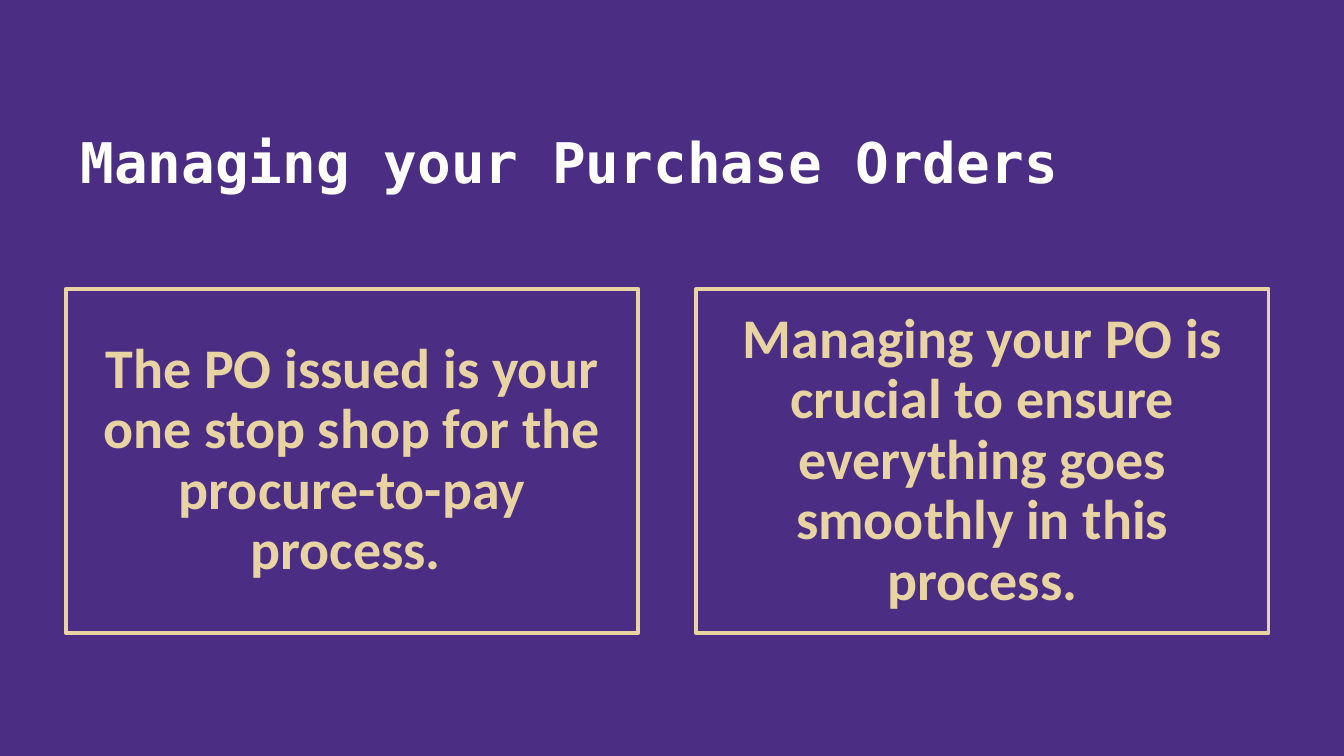
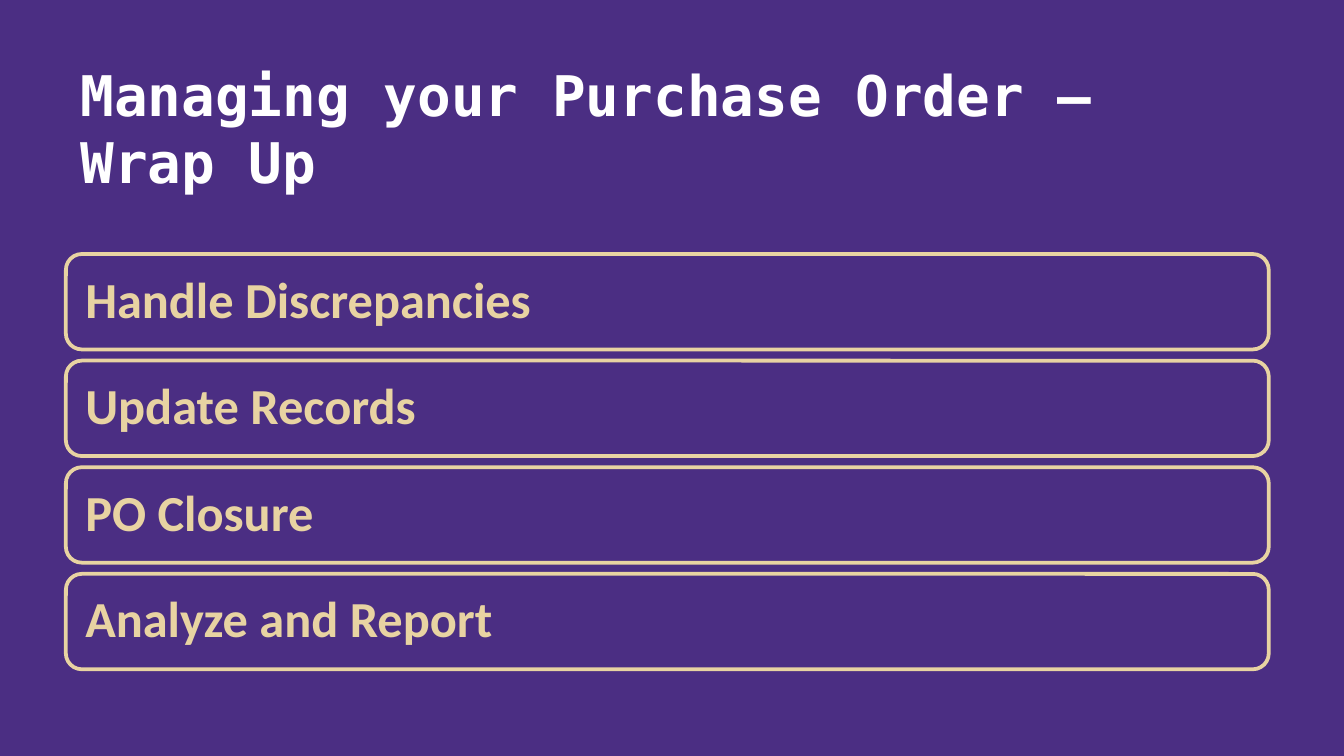
from dataclasses import dataclass

from pptx import Presentation
from pptx.dml.color import RGBColor as RGB
from pptx.enum.shapes import MSO_SHAPE as Shape
from pptx.enum.text import MSO_ANCHOR as Anchor, PP_ALIGN as Align
from pptx.util import Inches, Pt


@dataclass(frozen=True)
class Theme:
    purple: RGB = RGB(0x4B, 0x2E, 0x83)
    gold: RGB = RGB(0xE8, 0xD3, 0xA2)
    white: RGB = RGB(0xFF, 0xFF, 0xFF)
    head: str = "DejaVu Sans Mono"
    body: str = "Calibri"
    large: int = 30
    small: int = 27
    line: int = 2


theme = Theme()
deck = Presentation()
deck.slide_width = Inches(10)
deck.slide_height = Inches(10 * 9 / 16)


def add_page(title):
    """Add a purple slide with its title set at the bottom of the title area."""
    page = deck.slides.add_slide(deck.slide_layouts[6])
    page.background.fill.solid()
    page.background.fill.fore_color.rgb = theme.purple
    box = page.shapes.add_textbox(
        Inches(0.5), Inches(0.41), Inches(8.95), Inches(1.09))
    frame = box.text_frame
    frame.word_wrap = True
    frame.vertical_anchor = Anchor.BOTTOM
    para = frame.paragraphs[0]
    para.text = title
    font = para.font
    font.name, font.size, font.bold = theme.head, Pt(theme.large), True
    font.color.rgb = theme.white
    return page


def add_card(page, kind, place, text, size, align, inset):
    """Add a gold-framed card; place is left, top, width, height in inches."""
    card = page.shapes.add_shape(kind, *map(Inches, place))
    card.shadow.inherit = False
    card.fill.solid()
    card.fill.fore_color.rgb = theme.purple
    card.line.color.rgb = theme.gold
    card.line.width = Pt(theme.line)
    frame = card.text_frame
    frame.word_wrap = True
    frame.vertical_anchor = Anchor.MIDDLE
    frame.margin_left = frame.margin_right = Inches(inset)
    frame.margin_top = frame.margin_bottom = Inches(inset)
    para = frame.paragraphs[0]
    para.text = text
    para.alignment = align
    para.line_spacing = 0.9
    font = para.font
    font.name, font.size, font.bold = theme.body, Pt(size), True
    font.color.rgb = theme.gold


left, full = 0.49, 8.95

# Two cards side by side
page = add_page("Managing your Purchase Orders")
wide = 4.26
gap = full - 2 * wide
points = [
    "The PO issued is your one stop shop for the procure-to-pay process. ",
    "Managing your PO is crucial to ensure everything goes smoothly in this process.",
]
for col, text in enumerate(points):
    place = (left + col * (wide + gap), 2.15, wide, 2.56)
    add_card(page, Shape.RECTANGLE, place, text, theme.large, Align.CENTER, 0.12)

# Four stacked bars, spread evenly from top to end
page = add_page("Managing your Purchase Order – Wrap Up")
steps = ["Handle Discrepancies", "Update Records", "PO Closure", "Analyze and Report"]
top, end, high = 1.89, 4.98, 0.71
pitch = (end - top - high) / (len(steps) - 1)
for row, text in enumerate(steps):
    place = (left, top + row * pitch, full, high)
    add_card(page, Shape.ROUNDED_RECTANGLE, place, text, theme.small, Align.LEFT, 0.11)

deck.save("out.pptx")
